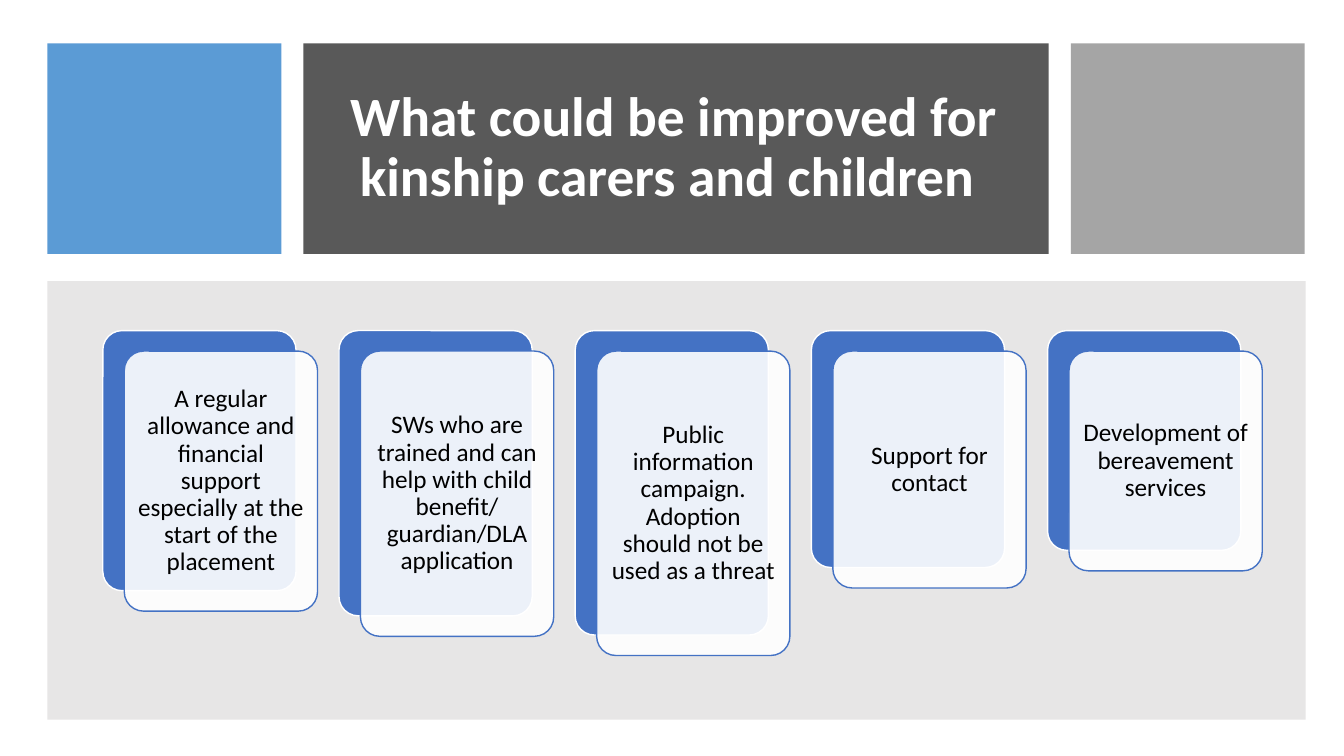
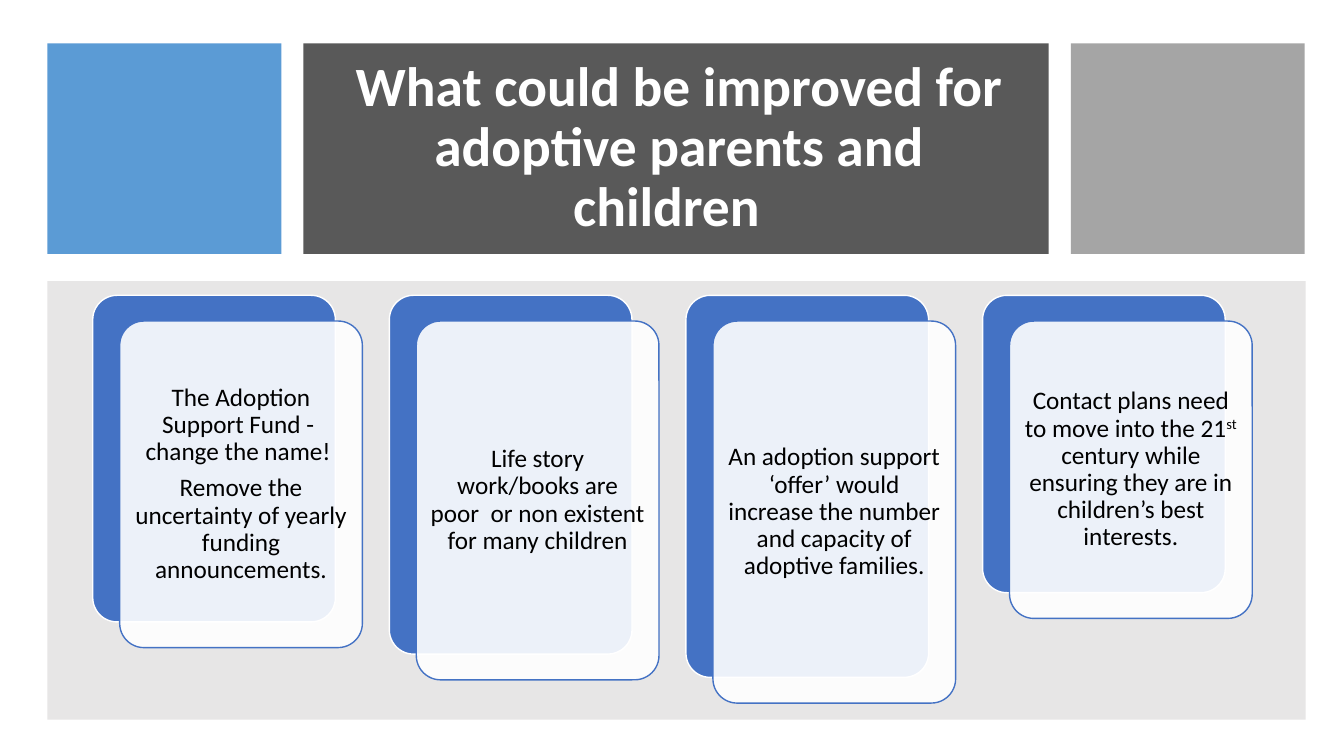
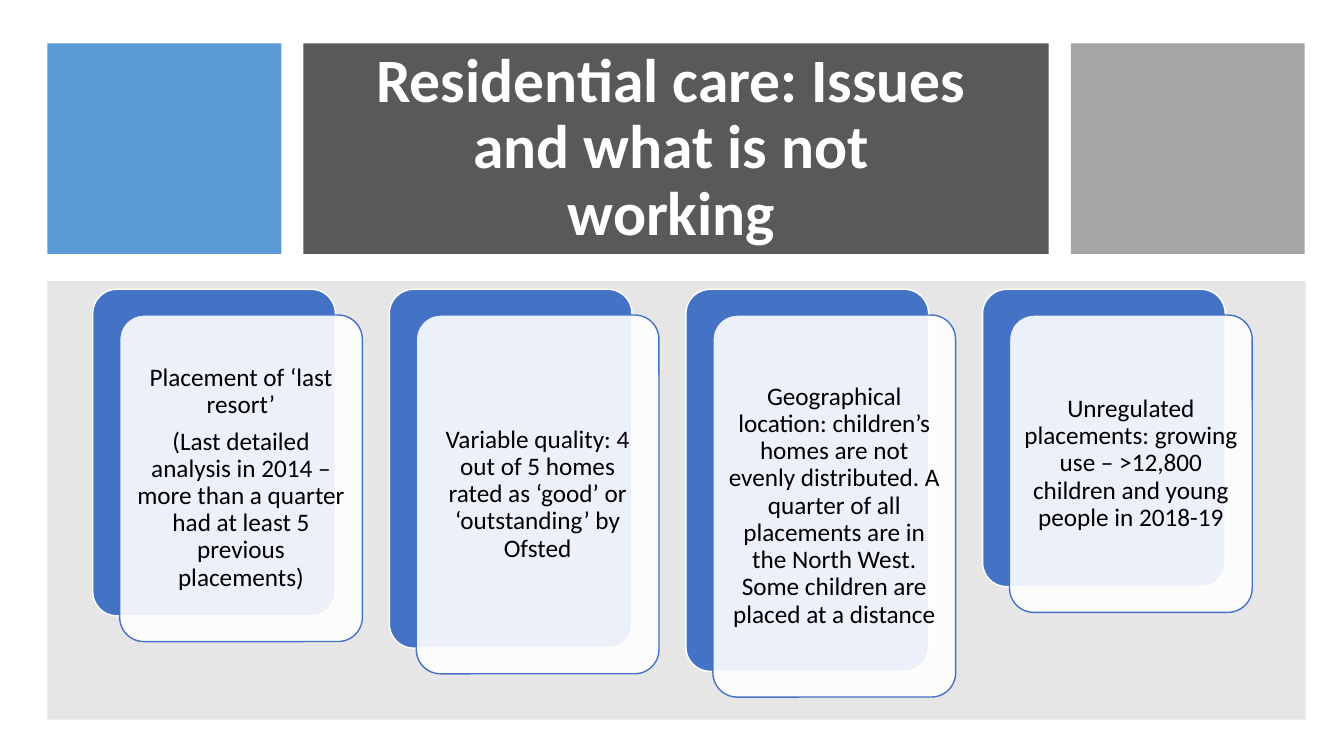
from lxml import etree
from pptx import Presentation
from pptx.dml.color import RGBColor
from pptx.enum.shapes import MSO_SHAPE
from pptx.enum.text import MSO_ANCHOR, PP_ALIGN
from pptx.oxml.ns import qn
from pptx.util import Emu, Pt

RECT = MSO_SHAPE.RECTANGLE
ROUND_RECT = MSO_SHAPE.ROUNDED_RECTANGLE
MIDDLE = MSO_ANCHOR.MIDDLE
CENTER = PP_ALIGN.CENTER

EMU_PER_PX = 9144  # 100 px to the inch
FONT = "Calibri"
WHITE, BLACK = "FFFFFF", "000000"
CARD_BLUE = "4472C4"
CARD_SIZE = 18
DIAGRAM_WIDTH = 1150
BANDS = [
    ((301, 43, 739, 209), "595959"),
    ((47, 43, 232, 209), "5B9BD5"),
    ((1062, 43, 232, 209), "A5A5A5"),
    ((47, 279, 1248, 435), "E7E6E6"),
]

# Each card is its height and its paragraphs; ^...^ marks a superscript.
SLIDES = [
    {
        "title": "What could be improved for kinship carers and children ",
        "title_box": (325, 75, 686, 145),
        "title_size": 39.6,
        "origin": (102, 328),
        "cards": [
            (258, ["A regular allowance and financial support especially "
                   "at the start of the placement"]),
            (283, ["SWs who are trained and can help with child benefit/ "
                   "guardian/DLA application"]),
            (302, ["Public information campaign. Adoption should not be "
                   "used as a threat"]),
            (235, ["Support for contact"]),
            (218, ["Development of bereavement services"]),
        ],
    },
    {
        "title": "What could be improved for adoptive parents and children  ",
        "title_box": (325, 75, 697, 145),
        "title_size": 39.6,
        "origin": (92, 293),
        "cards": [
            (324, ["The Adoption Support Fund -  change the name! ",
                   "Remove the uncertainty of yearly funding announcements."]),
            (356, ["Life story work/books are poor  or non existent for many "
                   "children"]),
            (379, ["An adoption support ‘offer’ would increase the number and "
                   "capacity of adoptive families."]),
            (295, ["Contact plans need to move into the 21^st^ century while "
                   "ensuring they are in children’s best interests."]),
        ],
    },
    {
        "title": "Residential care: Issues and what is not working",
        "title_box": (353, 75, 626, 145),
        "title_size": 44,
        "origin": (92, 287),
        "cards": [
            (324, ["Placement of ‘last resort’",
                   "(Last detailed analysis in 2014 – more than a quarter had "
                   "at least 5 previous placements)"]),
            (356, ["Variable quality: 4 out of 5 homes rated as ‘good’ or "
                   "‘outstanding’ by Ofsted"]),
            (379, ["Geographical location: children’s homes are not evenly "
                   "distributed. A quarter of all placements are in the North "
                   "West. Some children are placed at a distance"]),
            (295, ["Unregulated placements: growing use – >12,800 children "
                   "and young people in 2018-19"]),
        ],
    },
]


def px(*lengths):
    return [Emu(round(n * EMU_PER_PX)) for n in lengths]


def rgb(color):
    return RGBColor.from_string(color)


def add_box(slide, kind, box, fill, line=None):
    sp = slide.shapes.add_shape(kind, *px(*box))
    sp.shadow.inherit = False
    sp.fill.solid()
    sp.fill.fore_color.rgb = rgb(fill)
    if line:
        sp.line.color.rgb = rgb(line)
        sp.line.width = Pt(1)
    else:
        sp.line.fill.background()
    return sp


def set_alpha(sp, percent):
    color = sp._element.spPr.find(qn("a:solidFill"))[0]
    etree.SubElement(color, qn("a:alpha")).set("val", str(percent * 1000))


def write_text(tf, paragraphs, size, color, bold=False, space_after=0):
    tf.word_wrap = True
    tf.vertical_anchor = MIDDLE
    for i, text in enumerate(paragraphs):
        p = tf.add_paragraph() if i else tf.paragraphs[0]
        p.alignment = CENTER
        p.line_spacing = 0.9
        p.space_after = Pt(space_after)
        for j, part in enumerate(text.split("^")):
            r = p.add_run()
            r.text = part
            r.font.name = FONT
            r.font.size = Pt(size)
            r.font.bold = bold
            r.font.color.rgb = rgb(color)
            if j % 2:
                r._r.get_or_add_rPr().set("baseline", "30000")


def add_bands(slide):
    for box, fill in BANDS:
        add_box(slide, RECT, box, fill)


def add_title(slide, text, box, size):
    sp = slide.shapes.add_textbox(*px(*box))
    write_text(sp.text_frame, [text], size, WHITE, bold=True)


def add_card(slide, box, paragraphs):
    """A blue back plate with a translucent text plate shifted over it."""
    x, y, w, h = box
    back = add_box(slide, ROUND_RECT, box, CARD_BLUE, WHITE)
    front = add_box(slide, ROUND_RECT, (x + w / 9, y + w * 0.106, w, h),
                    WHITE, CARD_BLUE)
    set_alpha(front, 90)
    for plate in (back, front):
        plate.adjustments[0] = 0.1
    tf = front.text_frame
    tf.margin_left, tf.margin_top, tf.margin_right, tf.margin_bottom = px(7, 7, 7, 7)
    write_text(tf, paragraphs, CARD_SIZE, BLACK, space_after=6.3)


def add_card_row(slide, origin, cards):
    """Cards whose shift and gap are each a ninth of the card width."""
    left, top = origin
    width = DIAGRAM_WIDTH * 9 / (11 * len(cards) - 1)
    for i, (height, paragraphs) in enumerate(cards):
        x = left + i * width * 11 / 9
        add_card(slide, (x, top, width, height), paragraphs)


def main():
    prs = Presentation()
    prs.slide_width, prs.slide_height = px(1333, 750)
    for content in SLIDES:
        slide = prs.slides.add_slide(prs.slide_layouts[6])
        add_bands(slide)
        add_title(slide, content["title"], content["title_box"],
                  content["title_size"])
        add_card_row(slide, content["origin"], content["cards"])
    prs.save("out.pptx")


if __name__ == "__main__":
    main()
